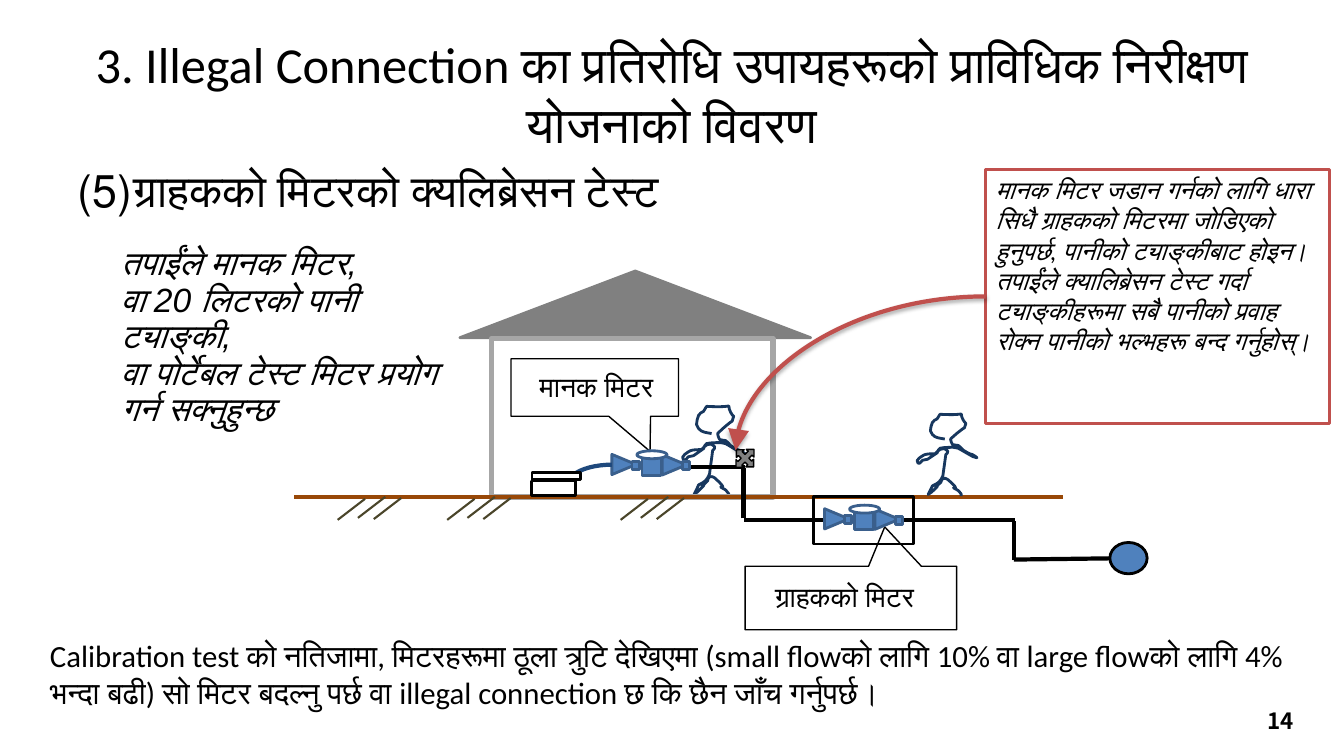
from dataclasses import dataclass, field
from typing import Any, Optional
from lxml.etree import SubElement
from pptx import Presentation
from pptx.dml.color import RGBColor
from pptx.enum.shapes import MSO_CONNECTOR, MSO_SHAPE
from pptx.enum.text import MSO_ANCHOR, MSO_AUTO_SIZE, PP_ALIGN
from pptx.oxml.ns import qn
from pptx.util import Cm, Pt


@dataclass(frozen=True)
class Theme:
    black: str = "000000"
    white: str = "FFFFFF"
    water: str = "4F81BD"
    meter_edge: str = "3A5F8C"
    hose: str = "1F497D"
    worker: str = "17375E"
    grey: str = "808080"
    wall: str = "A6A6A6"
    ground: str = "984807"
    soil: str = "4A452A"
    alert: str = "C0504D"
    title: tuple = ("Calibri", 36)
    heading: tuple = ("Calibri", 32)
    advice: tuple = ("Arial", 24)
    conclusion: tuple = ("Calibri", 22)
    label: tuple = ("Arial Narrow", 20)
    note: tuple = ("Calibri", 18)
    number: tuple = ("Noto Sans CJK JP", 16)


THEME = Theme()


@dataclass
class Form:
    """A preset shape; lengths in cm, line weight in points."""
    kind: MSO_SHAPE
    place: tuple
    line: str
    weight: float
    fill: Optional[str] = None
    rotation: float = 0
    adjustments: tuple = ()


@dataclass
class Line:
    start: tuple
    end: tuple
    color: str = THEME.black
    weight: float = 3


@dataclass
class Words:
    place: tuple
    lines: tuple
    type: tuple
    font: dict = field(default_factory=dict)
    para: dict = field(default_factory=dict)
    frame: dict = field(default_factory=dict)


def set_all(target: Any, values: dict) -> None:
    for name, value in values.items():
        setattr(target, name, value)


def lengths(values: tuple) -> list:
    return [Cm(value) for value in values]


def move(shape: Any, place: tuple) -> None:
    set_all(shape, dict(zip(("left", "top", "width", "height"), lengths(place))))


def paint(shape: Any, line: str, weight: float, fill: Optional[str] = None) -> None:
    shape.shadow.inherit = False
    if fill:
        shape.fill.solid()
        shape.fill.fore_color.rgb = RGBColor.from_string(fill)
    else:
        shape.fill.background()
    shape.line.color.rgb = RGBColor.from_string(line)
    shape.line.width = Pt(weight)


def draw_form(page: Any, form: Form) -> Any:
    shape = page.shapes.add_shape(form.kind, *lengths(form.place))
    paint(shape, form.line, form.weight, form.fill)
    shape.rotation = form.rotation
    for index, value in enumerate(form.adjustments):
        shape.adjustments[index] = value
    return shape


def draw_line(page: Any, line: Line, kind: MSO_CONNECTOR = MSO_CONNECTOR.STRAIGHT) -> Any:
    connector = page.shapes.add_connector(kind, *lengths(line.start + line.end))
    connector.line.color.rgb = RGBColor.from_string(line.color)
    connector.line.width = Pt(line.weight)
    SubElement(connector._element.spPr, qn("a:effectLst"))
    return connector


def write(box: Any, words: Words) -> None:
    move(box, words.place)
    frame = box.text_frame
    set_all(frame, {"word_wrap": True, "auto_size": MSO_AUTO_SIZE.NONE, **words.frame})
    name, size = words.type
    for index, line in enumerate(words.lines):
        para = frame.add_paragraph() if index else frame.paragraphs[0]
        set_all(para, words.para)
        span = para.add_run()
        span.text = line
        set_all(span.font, {"name": name, "size": Pt(size), **words.font})
        span.font.color.rgb = RGBColor.from_string(THEME.black)


def write_box(page: Any, words: Words) -> None:
    write(page.shapes.add_textbox(*lengths(words.place)), words)


# Worker outline on a 62 by 89 grid: a pair is a straight step, six numbers a curve
WORKER_GRID = (62, 89)
WORKER_START = (29, 27)
WORKER_STEPS = (
    (24, 26, 19, 26, 16, 22), (15, 21, 15, 19, 14, 18), (15, 15, 14, 12, 16, 9),
    (17, 7, 19, 6, 21, 5), (22, 3, 23, 2, 24, 0), (57, 2, 42, -5, 48, 6),
    (49, 8, 50, 9, 51, 10), (48, 18, 52, 12, 45, 18), (41, 21, 35, 27, 35, 27),
    (36, 29, 35, 31, 37, 33), (38, 34, 41, 33, 43, 34), (45, 35, 46, 37, 48, 39),
    (51, 41, 54, 43, 58, 44), (64, 48, 64, 48, 58, 46), (48, 40),
    (46, 39, 45, 38, 43, 37), (38, 36), (33, 36, 28, 36, 24, 37),
    (22, 38, 22, 40, 21, 42), (18, 44, 14, 47, 11, 49), (9, 50, 8, 50, 6, 50),
    (4, 51, 3, 55, 1, 53), (-3, 50, 6, 45, 8, 44), (11, 43, 15, 43, 19, 43),
    (22, 40, 26, 34, 32, 40), (33, 41, 31, 43, 30, 44), (30, 45, 27, 66, 27, 67),
    (24, 74, 22, 75, 16, 78), (15, 81, 10, 90, 12, 87), (14, 86, 16, 84, 17, 83),
    (29, 71, 11, 87, 25, 74), (26, 73, 25, 70, 27, 70), (28, 69, 31, 70, 32, 71),
    (51, 88, 29, 75, 43, 83), (47, 88, 46, 86, 46, 89))


def draw_worker(page: Any, place: tuple) -> None:
    builder = page.shapes.build_freeform(*WORKER_START)
    builder.add_line_segments([step[-2:] for step in WORKER_STEPS], close=False)
    worker = builder.convert_to_shape()
    move(worker, place)
    paint(worker, THEME.worker, 2)
    # Turn the straight steps into curves on the grid
    outline = worker._element.spPr.find(".//" + qn("a:path"))
    outline.clear()
    for name, size in zip(("w", "h"), WORKER_GRID):
        outline.set(name, str(size))
    for index, step in enumerate((WORKER_START,) + WORKER_STEPS):
        kind = "a:cubicBezTo" if len(step) == 6 else "a:lnTo" if index else "a:moveTo"
        segment = SubElement(outline, qn(kind))
        for x, y in zip(step[::2], step[1::2]):
            SubElement(segment, qn("a:pt"), x=str(x), y=str(y))


def draw_meter(page: Any, left: float, top: float) -> None:
    cone, block = MSO_SHAPE.ISOSCELES_TRIANGLE, MSO_SHAPE.RECTANGLE
    parts = ((block, 0.71, 0.11, 0.48, 0.51), (cone, 1.27, 0.05, 0.51, 0.61),
             (block, 1.73, 0.28, 0.18, 0.2), (cone, 0, 0.04, 0.51, 0.61),
             (block, 0.46, 0.27, 0.18, 0.2), (MSO_SHAPE.OVAL, 0.58, 0, 0.76, 0.2))
    for kind, x, y, width, height in parts:
        draw_form(page, Form(kind, (left + x, top + y, width, height), THEME.meter_edge, 2,
                             THEME.white if kind == MSO_SHAPE.OVAL else THEME.water,
                             90 if kind == cone else 0))


def draw_flow_arrow(page: Any) -> None:
    arrow = draw_line(page, Line((24.84, 7.47), (18.54, 11.35), THEME.alert), MSO_CONNECTOR.CURVE)
    properties = arrow._element.spPr
    properties.find(qn("a:prstGeom")).set("prst", "curvedConnector2")
    SubElement(properties.find(qn("a:ln")), qn("a:tailEnd"), type="triangle", w="lg", len="lg")
    shadow = SubElement(properties.find(qn("a:effectLst")), qn("a:outerShdw"), blurRad=str(Pt(3.1)),
                        dist=str(Pt(1.8)), dir="5400000", rotWithShape="0")
    color = SubElement(shadow, qn("a:srgbClr"), val=THEME.black)
    SubElement(color, qn("a:alpha"), val="35000")


def main() -> None:
    deck = Presentation()
    deck.slide_width, deck.slide_height = Cm(33.87), Cm(19.05)
    page = deck.slides.add_slide(deck.slide_layouts[1])
    middle = {"vertical_anchor": MSO_ANCHOR.MIDDLE}
    tight = dict.fromkeys(("margin_left", "margin_top", "margin_right", "margin_bottom"), 0)
    label_para = {"alignment": PP_ALIGN.CENTER, "line_spacing": Pt(21)}

    # Title and numbered heading
    write(page.shapes.title, Words(
        (1.69, 0.76, 30.48, 3.18),
        ("3. Illegal Connection का प्रतिरोधि उपायहरूको प्राविधिक निरीक्षण योजनाको विवरण",),
        THEME.title, para={"alignment": PP_ALIGN.CENTER}, frame=middle))
    body = page.placeholders[1]
    write(body, Words((1.7, 3.97, 29.74, 9.5), ("ग्राहकको मिटरको क्यलिब्रेसन टेस्ट",), THEME.heading))
    numbering = body.text_frame.paragraphs[0]._p.get_or_add_pPr()
    numbering.attrib.update({"marL": str(Cm(1.42)), "indent": str(-Cm(1.42))})
    SubElement(numbering, qn("a:buAutoNum"), type="arabicParenBoth", startAt="5")

    # Advice and meter labels
    write_box(page, Words(
        (2.79, 6.08, 8.79, 5.87),
        ("तपाईंले मानक मिटर,", "वा 20 लिटरको पानी ट्याङ्की,", "वा पोर्टेबल टेस्ट मिटर प्रयोग गर्न सक्नुहुन्छ"),
        THEME.advice, {"italic": True}, {"line_spacing": Pt(26)}))
    callout = MSO_SHAPE.RECTANGULAR_CALLOUT
    draw_form(page, Form(callout, (12.88, 9.04, 4.22, 1.45), THEME.black, 1, adjustments=(0.33, 1.11)))
    write_box(page, Words((12.86, 8.97, 4.34, 1.63), ("मानक मिटर",), THEME.label,
                          para=label_para, frame={**middle, **tight}))
    write_box(page, Words((18.62, 14.2, 5.33, 1.78), ("ग्राहकको मिटर",), THEME.label,
                          para=label_para, frame=middle))
    draw_form(page, Form(callout, (18.78, 14.27, 5.33, 1.6), THEME.black, 1, adjustments=(0.16, -1.12)))

    # House, ground and water main
    draw_worker(page, (17.2, 10.24, 1.57, 2.26))
    block = MSO_SHAPE.RECTANGLE
    draw_form(page, Form(MSO_SHAPE.ISOSCELES_TRIANGLE, (11.59, 6.83, 8.84, 1.68), THEME.grey, 2, THEME.grey))
    draw_form(page, Form(block, (12.39, 8.53, 7.09, 3.99), THEME.wall, 4))
    draw_line(page, Line((7.42, 12.52), (26.78, 12.52), THEME.ground))
    draw_form(page, Form(MSO_SHAPE.OVAL, (27.97, 13.67, 0.94, 0.79), THEME.black, 2, THEME.water))

    # Pipes and meters
    for start, end in (((27.97, 14.07), (25.55, 14.1)), ((25.55, 14.12), (25.55, 13.13)),
                       ((25.58, 13.11), (22.38, 13.11)), ((20.8, 13.11), (18.75, 13.11)),
                       ((18.74, 13.06), (18.74, 11.79)), ((18.77, 11.76), (17.42, 11.76))):
        draw_line(page, Line(start, end))
    draw_meter(page, 20.83, 12.73)
    draw_meter(page, 15.47, 11.36)
    hose = draw_form(page, Form(MSO_SHAPE.ARC, (14.3, 11.71, 2.24, 1.02), THEME.hose, 3))
    hose._element.spPr.find(qn("a:xfrm")).set("flipH", "1")
    draw_form(page, Form(block, (13.41, 11.91, 1.22, 0.18), THEME.black, 2, THEME.white))
    draw_form(page, Form(block, (20.51, 12.52, 2.51, 1.19), THEME.black, 2))
    draw_worker(page, (23.11, 10.44, 1.5, 2.06))

    # Soil hatching, tank and valve
    for left in (9.2, 11.96, 16.33):
        for shift, top in ((0, 12.57), (0.91, 12.55), (0.51, 12.52)):
            x = left + shift
            draw_line(page, Line((x, top), (x - 0.69, top + 0.53), THEME.soil, 1.5))
    draw_form(page, Form(block, (13.39, 12.12, 1.12, 0.36), THEME.black, 2, THEME.white))
    draw_form(page, Form(MSO_SHAPE.QUAD_ARROW, (18.47, 11.23, 0.61, 0.64), THEME.black, 1, THEME.grey, 45))

    # Page number, conclusion and warning note
    write_box(page, Words((24.96, 17.65, 7.9, 1.02), ("14",), THEME.number, {"bold": True},
                          {"alignment": PP_ALIGN.RIGHT}, middle))
    write_box(page, Words(
        (1.01, 15.93, 32.18, 2.13),
        ("Calibration test को नतिजामा, मिटरहरूमा ठूला त्रुटि देखिएमा (small flowको लागि 10% वा large flowको "
         "लागि 4% भन्दा बढी) सो मिटर बदल्नु पर्छ वा illegal connection छ कि छैन जाँच गर्नुपर्छ।",),
        THEME.conclusion))
    note = Words(
        (24.84, 4.27, 8.66, 6.4),
        ("मानक मिटर जडान गर्नको लागि धारा सिधै ग्राहकको मिटरमा जोडिएको हुनुपर्छ, पानीको ट्याङ्कीबाट होइन। "
         "तपाईंले क्यालिब्रेसन टेस्ट गर्दा ट्याङ्कीहरूमा सबै पानीको प्रवाह रोक्न पानीको भल्भहरू बन्द गर्नुहोस्।",),
        THEME.note, {"italic": True}, {"alignment": PP_ALIGN.LEFT}, {"vertical_anchor": MSO_ANCHOR.TOP})
    write(draw_form(page, Form(block, note.place, THEME.alert, 2)), note)
    draw_flow_arrow(page)
    deck.save("out.pptx")


if __name__ == "__main__":
    main()
